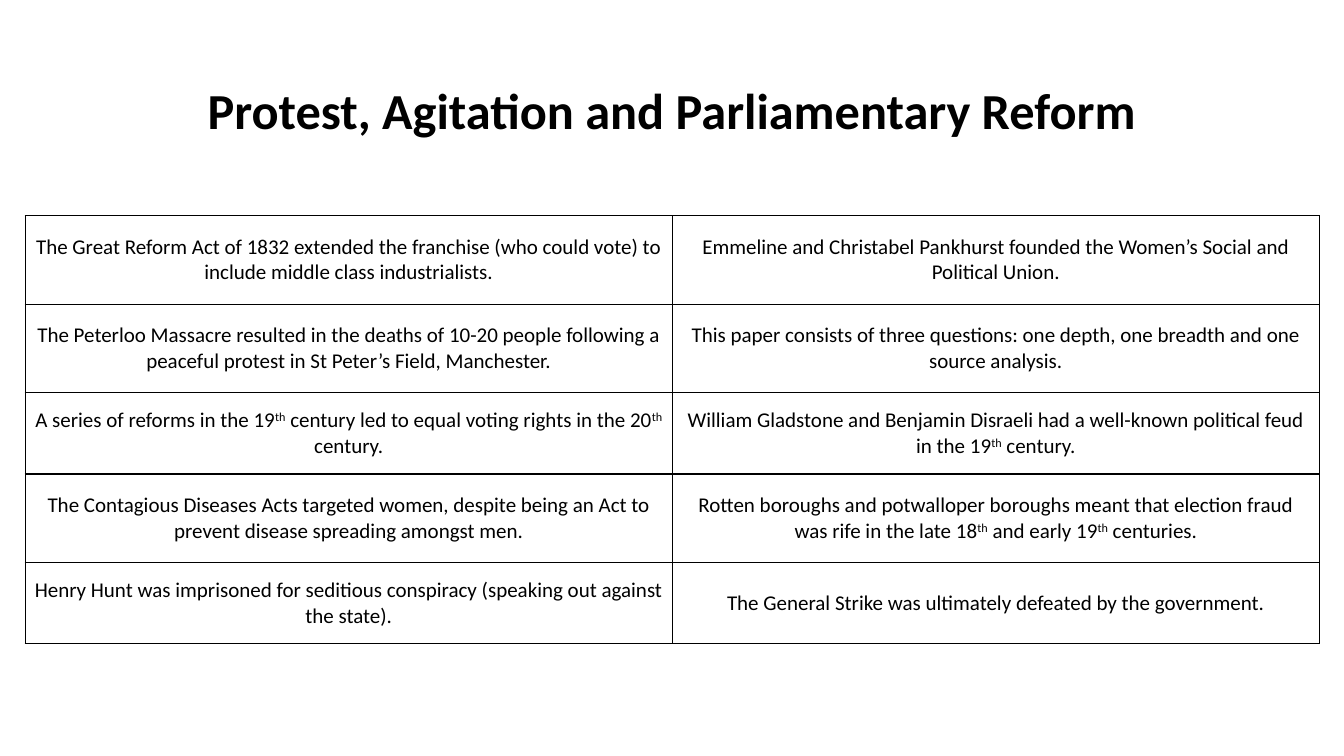
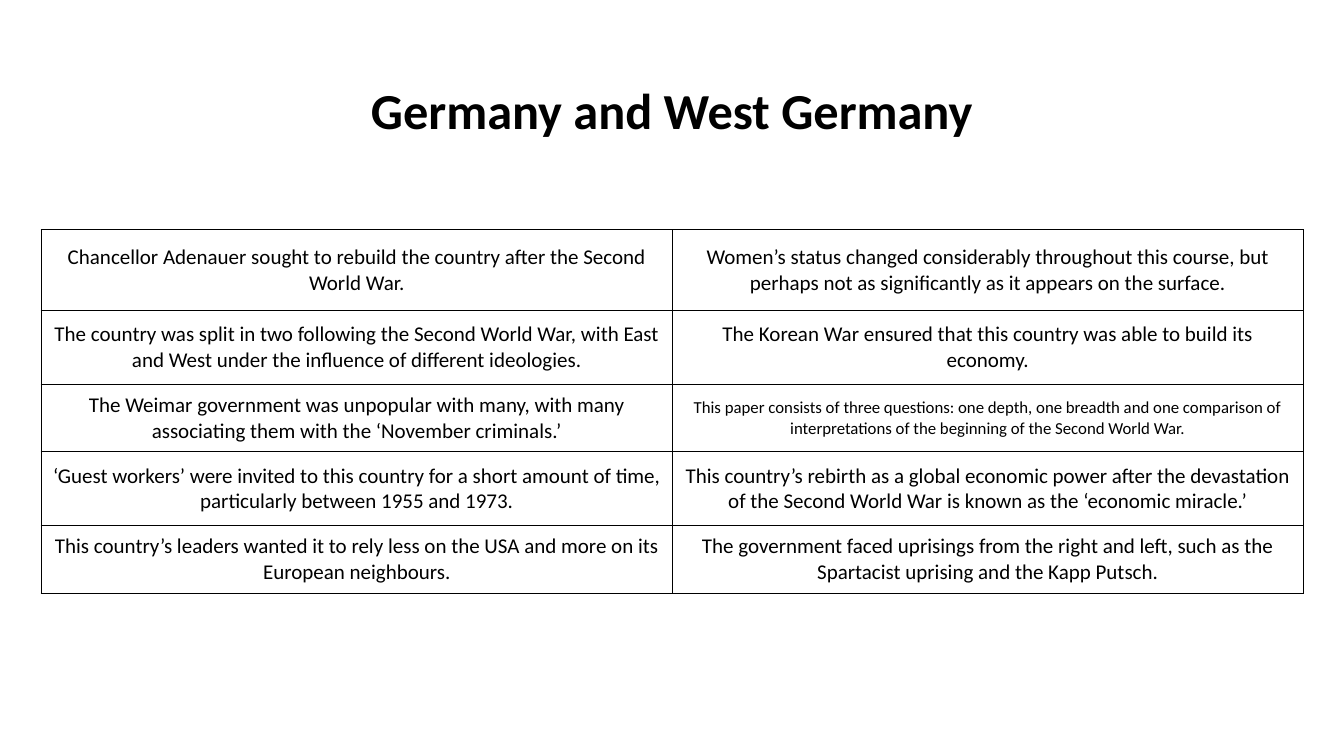
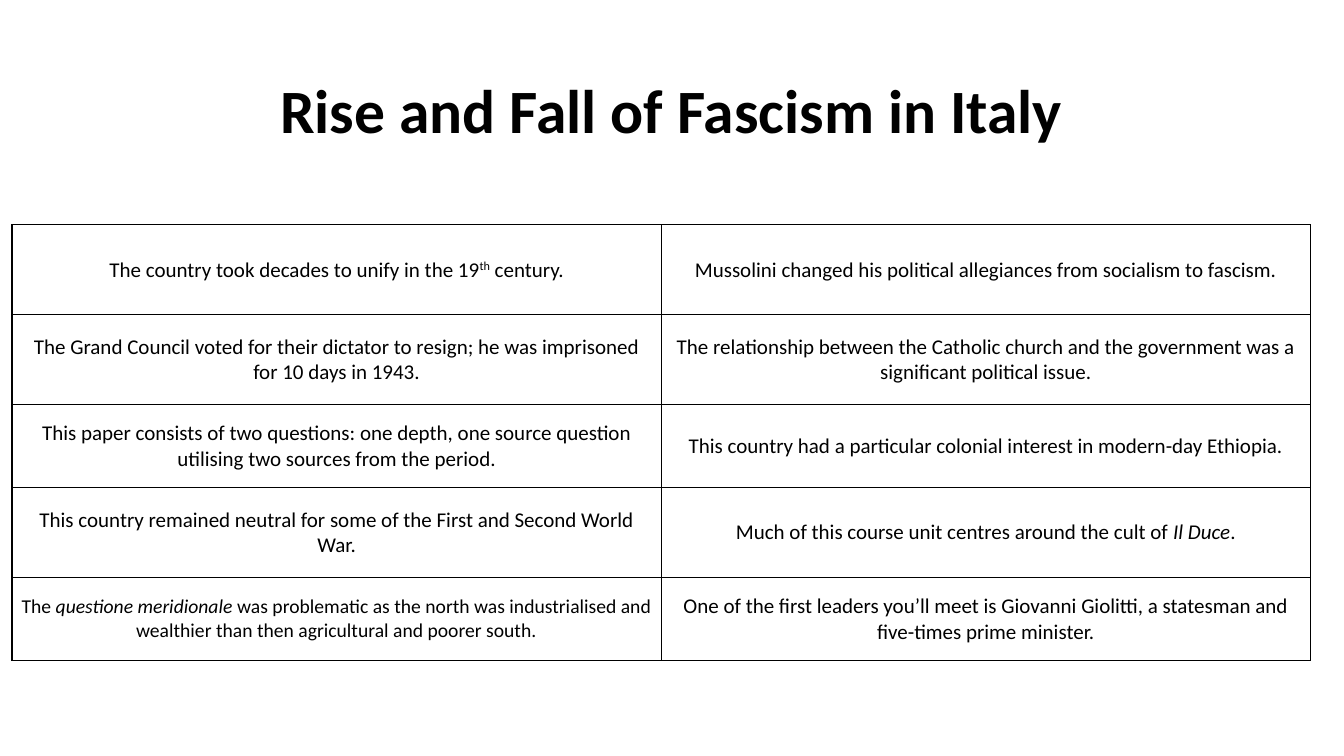
"""Build three slides of history clues, each a title over a grid."""
from lxml.etree import SubElement
from pptx import Presentation
from pptx.dml.color import RGBColor
from pptx.enum.text import MSO_ANCHOR, PP_ALIGN
from pptx.oxml.ns import qn
from pptx.util import Pt

HUES = {"ink": "000000", "page": "FFFFFF"}
FONT = "Calibri"
INSET = {"margin_left": Pt(5.8), "margin_right": Pt(5.8),
         "margin_top": Pt(2.9), "margin_bottom": Pt(2.9),
         "vertical_anchor": MSO_ANCHOR.MIDDLE}
FRAME = {"word_wrap": True, "vertical_anchor": MSO_ANCHOR.MIDDLE}
PLAIN = {"first_row": False, "horz_banding": False}

PAGES = [
    {"title": "Protest, Agitation and Parliamentary Reform", "size": 36,
     "left": 18, "top": 154, "width": 462.2,
     "rows": [63.3, 63.3, 58, 63.3, 58], "small": {},
     "clues": [
         ("The Great Reform Act of 1832 extended the franchise (who could vote) to include middle class industrialists.",
          "Emmeline and Christabel Pankhurst founded the Women’s Social and Political Union."),
         ("The Peterloo Massacre resulted in the deaths of 10-20 people following a peaceful protest in St Peter’s Field, Manchester.",
          "This paper consists of three questions: one depth, one breadth and one source analysis."),
         ("A series of reforms in the 19^th^ century led to equal voting rights in the 20^th^ century.",
          "William Gladstone and Benjamin Disraeli had a well-known political feud in the 19^th^ century."),
         ("The Contagious Diseases Acts targeted women, despite being an Act to prevent disease spreading amongst men.",
          "Rotten boroughs and potwalloper boroughs meant that election fraud was rife in the late 18^th^ and early 19^th^ centuries."),
         ("Henry Hunt was imprisoned for seditious conspiracy (speaking out against the state).",
          "The General Strike was ultimately defeated by the government."),
     ]},
    {"title": "Germany and West Germany", "size": 36,
     "left": 29.5, "top": 164.2, "width": 450.7,
     "rows": [57.6, 52.8, 48.2, 52.8, 48.2], "small": {(2, 1): 12},
     "clues": [
         ("Chancellor Adenauer sought to rebuild the country after the Second World War.",
          "Women’s status changed considerably throughout this course, but perhaps not as significantly as it appears on the surface."),
         ("The country was split in two following the Second World War, with East and West under the influence of different ideologies.",
          "The Korean War ensured that this country was able to build its economy."),
         ("The Weimar government was unpopular with many, with many associating them with the ‘November criminals.’",
          "This paper consists of three questions: one depth, one breadth and one comparison of interpretations of the beginning of the Second World War."),
         ("‘Guest workers’ were invited to this country for a short amount of time, particularly between 1955 and 1973.",
          "This country’s rebirth as a global economic power after the devastation of the Second World War is known as the ‘economic miracle.’"),
         ("This country’s leaders wanted it to rely less on the USA and more on its European neighbours.",
          "The government faced uprisings from the right and left, such as the Spartacist uprising and the Kapp Putsch."),
     ]},
    {"title": "Rise and Fall of Fascism in Italy", "size": 44,
     "left": 8.6, "top": 160.6, "width": 463.7,
     "rows": [64.3, 64.3, 59.2, 64.3, 59.2], "small": {(4, 0): 14},
     "clues": [
         ("The country took decades to unify in the 19^th^ century.",
          "Mussolini changed his political allegiances from socialism to fascism."),
         ("The Grand Council voted for their dictator to resign; he was imprisoned for 10 days in 1943.",
          "The relationship between the Catholic church and the government was a significant political issue."),
         ("This paper consists of two questions: one depth, one source question utilising two sources from the period.",
          "This country had a particular colonial interest in modern-day Ethiopia."),
         ("This country remained neutral for some of the First and Second World War.",
          "Much of this course unit centres around the cult of _Il Duce_."),
         ("The _questione meridionale_ was problematic as the north was industrialised and wealthier than then agricultural and poorer south.",
          "One of the first leaders you’ll meet is Giovanni Giolitti, a statesman and five-times prime minister."),
     ]},
]


def apply(item, style):
    for name, value in style.items():
        setattr(item, name, value)


class Deck:
    def __init__(self):
        self.show = Presentation()
        apply(self.show, {"slide_width": Pt(960), "slide_height": Pt(540)})
        self.slide = None

    def page(self):
        self.slide = self.show.slides.add_slide(self.show.slide_layouts[6])
        fill = self.slide.background.fill
        fill.solid()
        fill.fore_color.rgb = RGBColor.from_string(HUES["page"])

    def text(self, para, words, **style):
        para.alignment = PP_ALIGN.CENTER
        for i, part in enumerate(words.split("^")):
            for j, bit in enumerate(part.split("_")):
                run = para.add_run()
                run.text = bit
                apply(run.font, {"name": FONT, **style})
                run.font.color.rgb = RGBColor.from_string(HUES["ink"])
                if i % 2:
                    run._r.get_or_add_rPr().set("baseline", "30000")
                if j % 2:
                    run.font.italic = True

    def title(self, words, size):
        frame = self.slide.shapes.add_textbox(
            Pt(66), Pt(28.8), Pt(828), Pt(104.4)).text_frame
        apply(frame, FRAME)
        para = frame.paragraphs[0]
        para.line_spacing = 0.9
        self.text(para, words, size=Pt(size), bold=True)

    def edge(self, cell):
        props = cell._tc.get_or_add_tcPr()
        for side in "LRTB":
            line = SubElement(props, qn("a:ln" + side), w=str(Pt(1)))
            fill = SubElement(line, qn("a:solidFill"))
            SubElement(fill, qn("a:srgbClr"), val=HUES["ink"])

    def grid(self, left, top, width, rows, clues, small):
        table = self.slide.shapes.add_table(
            len(rows), 2, Pt(left), Pt(top), Pt(2 * width), Pt(sum(rows))).table
        apply(table, PLAIN)
        for col in table.columns:
            col.width = Pt(width)
        for r, (height, pair) in enumerate(zip(rows, clues)):
            table.rows[r].height = Pt(height)
            for c, words in enumerate(pair):
                cell = table.cell(r, c)
                apply(cell, INSET)
                self.edge(cell)
                cell.fill.background()
                self.text(cell.text_frame.paragraphs[0], words,
                          size=Pt(small.get((r, c), 15)))


def main():
    deck = Deck()
    for page in PAGES:
        deck.page()
        deck.title(page["title"], page["size"])
        deck.grid(page["left"], page["top"], page["width"],
                  page["rows"], page["clues"], page["small"])
    deck.show.save("out.pptx")


if __name__ == "__main__":
    main()
